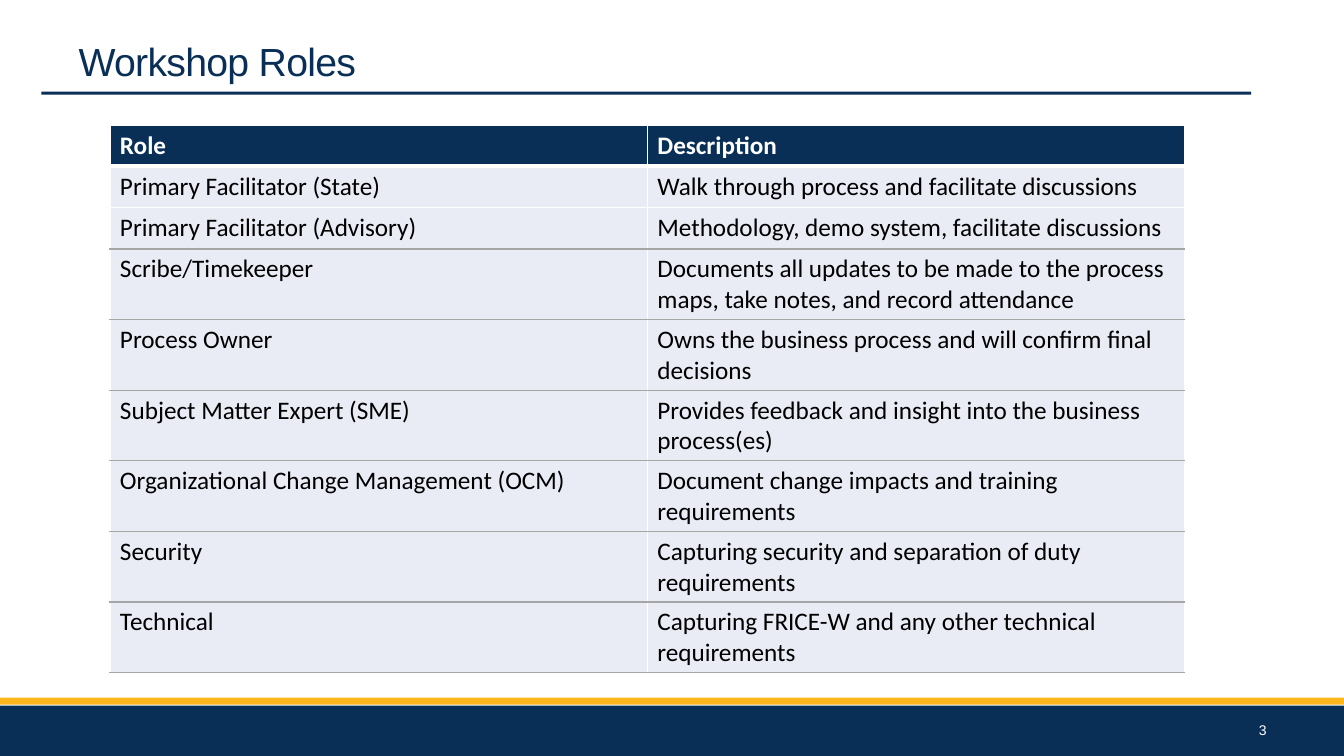
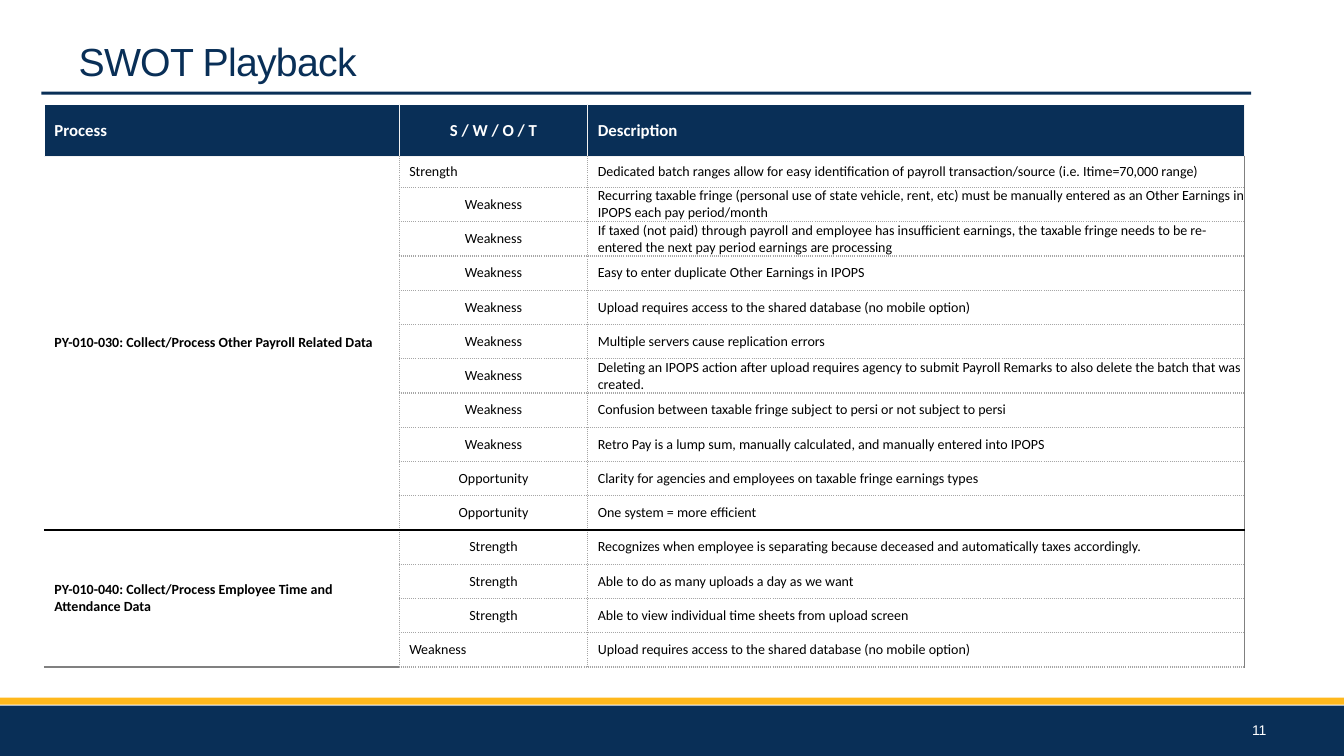
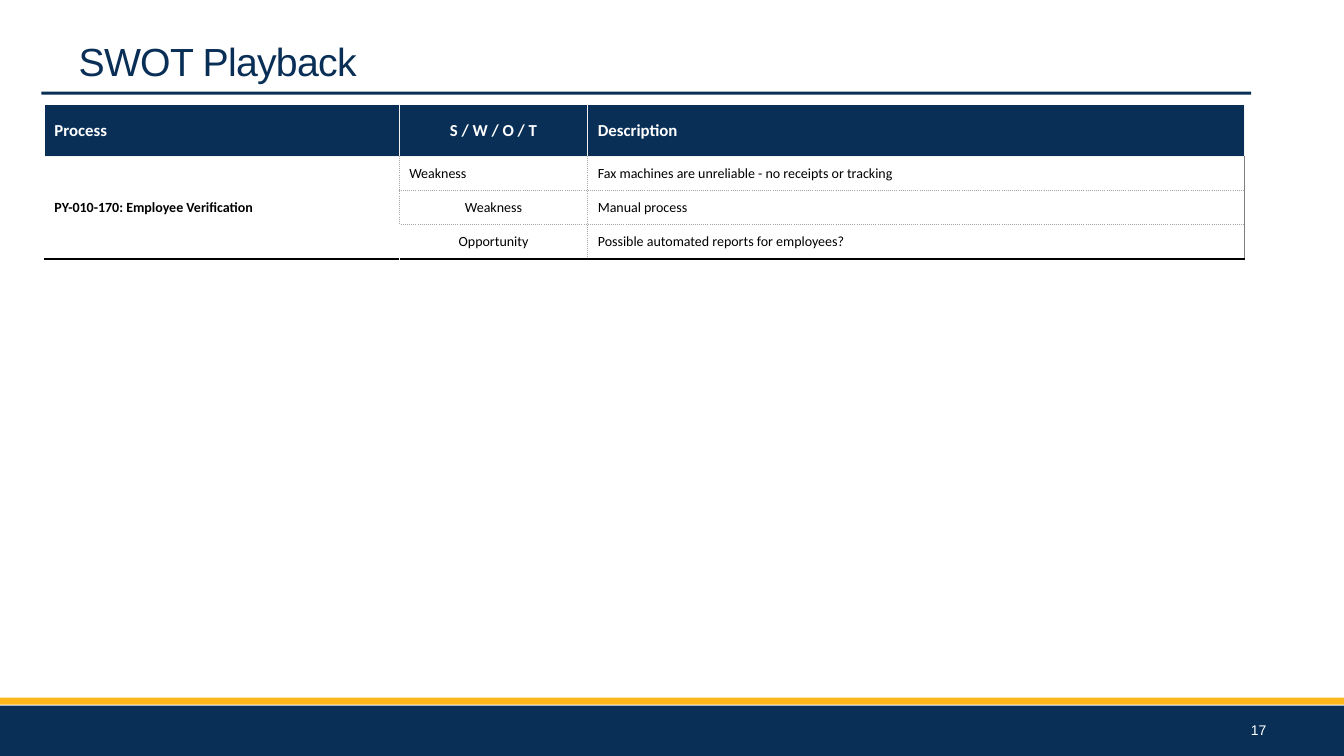
from collections import namedtuple
from dataclasses import dataclass

from pptx import Presentation
from pptx.dml.color import RGBColor
from pptx.enum import shapes, text
from pptx.oxml import parse_xml
from pptx.oxml.ns import nsdecls, qn
from pptx.util import Inches, Pt

LEFT, CENTER, RIGHT = text.PP_ALIGN.LEFT, text.PP_ALIGN.CENTER, text.PP_ALIGN.RIGHT
TOP, MIDDLE = text.MSO_ANCHOR.TOP, text.MSO_ANCHOR.MIDDLE
SIDES = "LRTB"

Line = namedtuple("Line", "color width dash", defaults=(1, "solid"))
Group = namedtuple("Group", "process entries process_end entry_end")


@dataclass(frozen=True)
class Theme:
    navy: str = "092F57"
    gold: str = "FFB81C"
    white: str = "FFFFFF"
    black: str = "000000"
    row_tint: str = "E9EBF5"
    heading_font: str = "Arial"
    table_font: str = "Calibri"
    title_size: int = 28
    role_size: int = 18
    swot_head_size: int = 12
    small_size: int = 10


T = Theme()

WHITE_LINE = Line(T.white)
HEADER_RULE = Line(T.white, 3)
PALE_LINE = Line("F2F2F2")
GREY_LINE = Line("A6A6A6")
DARK_LINE = Line("808080")
BLACK_LINE = Line(T.black)
DOTTED = Line("A6A6A6", 1, "sysDot")

ROLES = [
    ("Role", "Description"),
    ("Primary Facilitator (State)", "Walk through process and facilitate discussions"),
    ("Primary Facilitator (Advisory)", "Methodology, demo system, facilitate discussions"),
    ("Scribe/Timekeeper",
     "Documents all updates to be made to the process maps, take notes, and record attendance"),
    ("Process Owner", "Owns the business process and will confirm final decisions"),
    ("Subject Matter Expert (SME)",
     "Provides feedback and insight into the business process(es)"),
    ("Organizational Change Management (OCM)",
     "Document change impacts and training requirements"),
    ("Security", "Capturing security and separation of duty requirements"),
    ("Technical", "Capturing FRICE-W and any other technical requirements"),
]

SWOT_HEADER = ("Process", "S / W / O / T", "Description")

PAYROLL_SWOT = [
    Group("PY-010-030: Collect/Process Other Payroll Related Data", [
        ("Strength", "Dedicated batch ranges allow for easy identification of payroll "
                     "transaction/source (i.e. Itime=70,000 range)"),
        ("Weakness", "Recurring taxable fringe (personal use of state vehicle, rent, etc) must be "
                     "manually entered as an Other Earnings in IPOPS each pay period/month"),
        ("Weakness", "If taxed (not paid) through payroll and employee has insufficient earnings, "
                     "the taxable fringe needs to be re-entered the next pay period earnings are "
                     "processing"),
        ("Weakness", "Easy to enter duplicate Other Earnings in IPOPS"),
        ("Weakness", "Upload requires access to the shared database (no mobile option)"),
        ("Weakness", "Multiple servers cause replication errors"),
        ("Weakness", "Deleting an IPOPS action after upload requires agency to submit Payroll "
                     "Remarks to also delete the batch that was created."),
        ("Weakness", "Confusion between taxable fringe subject to persi or not subject to persi"),
        ("Weakness", "Retro Pay is a lump sum, manually calculated, and manually entered into "
                     "IPOPS"),
        ("Opportunity", "Clarity for agencies and employees on taxable fringe earnings types"),
        ("Opportunity", "One system = more efficient"),
    ], BLACK_LINE, BLACK_LINE),
    Group("PY-010-040: Collect/Process Employee Time and Attendance Data", [
        ("Strength", "Recognizes when employee is separating because deceased and automatically "
                     "taxes accordingly."),
        ("Strength", "Able to do as many uploads a day as we want"),
        ("Strength", "Able to view individual time sheets from upload screen"),
        ("Weakness", "Upload requires access to the shared database (no mobile option)"),
    ], DARK_LINE, DOTTED),
]

VERIFICATION_SWOT = [
    Group("PY-010-170: Employee Verification", [
        ("Weakness", "Fax machines are unreliable - no receipts or tracking"),
        ("Weakness", "Manual process"),
        ("Opportunity", "Possible automated reports for employees?"),
    ], BLACK_LINE, BLACK_LINE),
]


def write(tf, content, *, size, color, font, bold=False, align=LEFT, spacing=None, tracking=None):
    p = tf.paragraphs[0]
    p.alignment = align
    if spacing:
        p.line_spacing = spacing
    r = p.add_run()
    r.text = content
    r.font.size, r.font.name, r.font.bold = Pt(size), font, bold
    r.font.color.rgb = RGBColor.from_string(color)
    if tracking:
        r.font._element.set("spc", str(int(tracking * 100)))


def add_bands(slide):
    """Draw the footer bands and title rule, then move them to the slide's layout."""
    tree = slide.slide_layout.shapes.element
    next_id = max(s.shape_id for s in slide.slide_layout.shapes) + 1
    bands = [(0, 7, 13.33, 0.5, T.navy), (0, 6.92, 13.33, 0.07, T.gold),
             (0.41, 0.91, 12, 0.03, T.navy)]
    for i, (*box, color) in enumerate(bands):
        sp = slide.shapes.add_shape(shapes.MSO_SHAPE.RECTANGLE, *map(Inches, box))
        sp.shadow.inherit = False
        sp.fill.solid()
        sp.fill.fore_color.rgb = RGBColor.from_string(color)
        sp.line.fill.background()
        sp.element.nvSpPr.cNvPr.id = next_id + i
        tree.insert(2 + i, sp.element)


def add_slide(prs, title, number):
    slide = prs.slides.add_slide(prs.slide_layouts[5])
    sp = slide.shapes.title
    sp.left, sp.top, sp.width, sp.height = map(Inches, (0.68, 0.43, 11.5, 0.49))
    tf = sp.text_frame
    tf.vertical_anchor, tf.auto_size = TOP, text.MSO_AUTO_SIZE.NONE
    write(tf, title, size=T.title_size, color=T.navy, font=T.heading_font,
          spacing=0.75, tracking=-0.5)

    tf = slide.shapes.add_textbox(*map(Inches, (12.2, 7.02, 0.46, 0.44))).text_frame
    tf.word_wrap, tf.vertical_anchor = True, MIDDLE
    write(tf, str(number), size=T.small_size, color=T.white, font=T.heading_font, align=RIGHT)
    return slide


def add_table(slide, left, top, height, widths, heights):
    frame = slide.shapes.add_table(len(heights), len(widths), Inches(left), Inches(top),
                                   Inches(sum(widths)), Inches(height))
    table = frame.table
    table.first_row = table.horz_banding = False
    for column, width in zip(table.columns, widths):
        column.width = Inches(width)
    for row, row_height in zip(table.rows, heights):
        row.height = Inches(row_height)
    frame.height = Inches(height)
    return table


def set_border(cell, side, line):
    tcPr = cell._tc.get_or_add_tcPr()
    old = tcPr.find(qn(f"a:ln{side}"))
    if old is not None:
        tcPr.remove(old)
    before = SIDES[:SIDES.index(side)]
    position = sum(tcPr.find(qn(f"a:ln{s}")) is not None for s in before)
    tcPr.insert(position, parse_xml(
        f'<a:ln{side} {nsdecls("a")} w="{Pt(line.width)}"><a:solidFill>'
        f'<a:srgbClr val="{line.color}"/></a:solidFill>'
        f'<a:prstDash val="{line.dash}"/></a:ln{side}>'))


def fill_cell(cell, content, borders, *, fill=None, anchor=MIDDLE, margins=None, **style):
    """Borders come in the order left, right, top, bottom; margins likewise."""
    cell.vertical_anchor = anchor
    if margins:
        (cell.margin_left, cell.margin_right,
         cell.margin_top, cell.margin_bottom) = map(Inches, margins)
    if fill:
        cell.fill.solid()
        cell.fill.fore_color.rgb = RGBColor.from_string(fill)
    else:
        cell.fill.background()
    for side, line in zip(SIDES, borders):
        set_border(cell, side, line)
    if content:
        write(cell.text_frame, content, font=T.table_font, **style)


def add_roles_table(slide):
    table = add_table(slide, 1.09, 1.24, 5.42, [5.33] * 2, [0.41] * len(ROLES))
    rules = [WHITE_LINE, HEADER_RULE, WHITE_LINE] + [GREY_LINE] * (len(ROLES) - 2)
    for i, row in enumerate(ROLES):
        header = i == 0
        for j, content in enumerate(row):
            fill_cell(table.cell(i, j), content, (WHITE_LINE, WHITE_LINE, rules[i], rules[i + 1]),
                      fill=T.navy if header else T.row_tint, anchor=TOP, size=T.role_size,
                      color=T.white if header else T.black, bold=header)


def add_swot_table(slide, groups, height, first_height, left_rows):
    """left_rows holds the table rows whose S/W/O/T label is set flush left."""
    count = sum(len(g.entries) for g in groups)
    table = add_table(slide, 0.44, 1.04, height, [3.52, 1.87, 6.51],
                      [0.51, first_height] + [0.34] * (count - 1))
    for j, content in enumerate(SWOT_HEADER):
        fill_cell(table.cell(0, j), content,
                  (PALE_LINE if j else WHITE_LINE, PALE_LINE, WHITE_LINE, PALE_LINE),
                  fill=T.navy, size=T.swot_head_size, color=T.white, bold=True,
                  align=CENTER if j == 1 else LEFT)

    body = dict(size=T.small_size, color=T.black)
    row, group_top = 1, PALE_LINE
    for group in groups:
        last = row + len(group.entries) - 1
        table.cell(row, 0).merge(table.cell(last, 0))
        fill_cell(table.cell(row, 0), group.process,
                  (WHITE_LINE, DOTTED, group_top, group.process_end), bold=True, **body)
        for i, (label, description) in enumerate(group.entries, row):
            if i > row:
                set_border(table.cell(i, 0), "L", WHITE_LINE)
                set_border(table.cell(i, 0), "R", DOTTED)
            above = group_top if i == row else DOTTED
            below = group.entry_end if i == last else DOTTED
            flush = i in left_rows
            fill_cell(table.cell(i, 1), label, (DOTTED, DOTTED, above, below),
                      margins=(0.1 if flush else 0, 0, 0, 0),
                      align=LEFT if flush else CENTER, **body)
            fill_cell(table.cell(i, 2), description, (DOTTED, DARK_LINE, above, below),
                      margins=(0.1, 0, 0, 0), **body)
        set_border(table.cell(last, 0), "B", group.process_end)
        row, group_top = last + 1, group.entry_end
    return table


def main():
    prs = Presentation()
    prs.slide_width, prs.slide_height = Inches(13.33), Inches(7.5)

    slide = add_slide(prs, "Workshop Roles", 3)
    add_bands(slide)
    add_roles_table(slide)

    slide = add_slide(prs, "SWOT Playback", 11)
    add_swot_table(slide, PAYROLL_SWOT, 5.57, 0.31, left_rows={1, 15})

    slide = add_slide(prs, "SWOT Playback", 17)
    table = add_swot_table(slide, VERIFICATION_SWOT, 1.53, 0.34, left_rows={1})
    set_border(table.cell(3, 0), "R", WHITE_LINE)
    set_border(table.cell(3, 1), "L", WHITE_LINE)

    prs.save("out.pptx")


if __name__ == "__main__":
    main()
